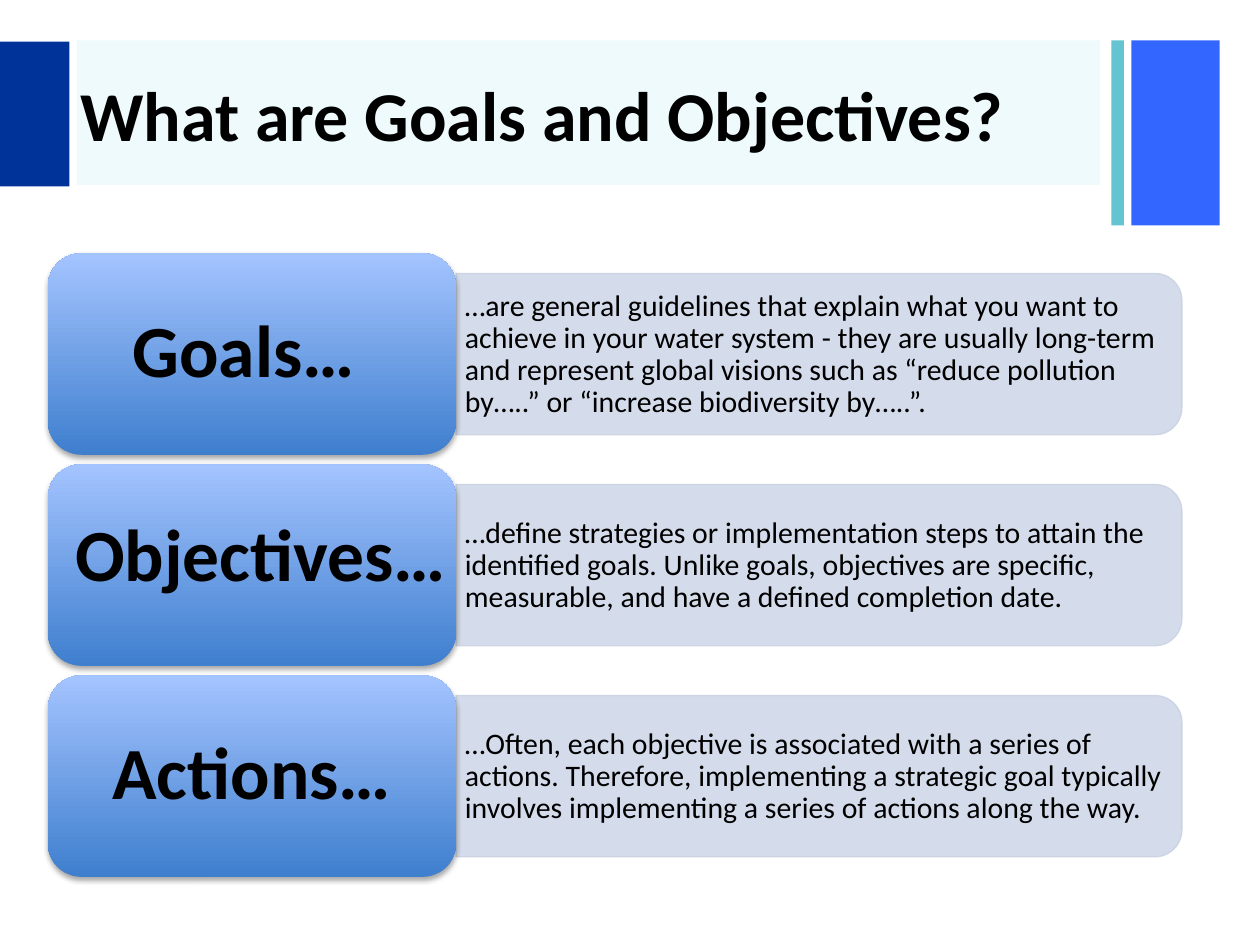
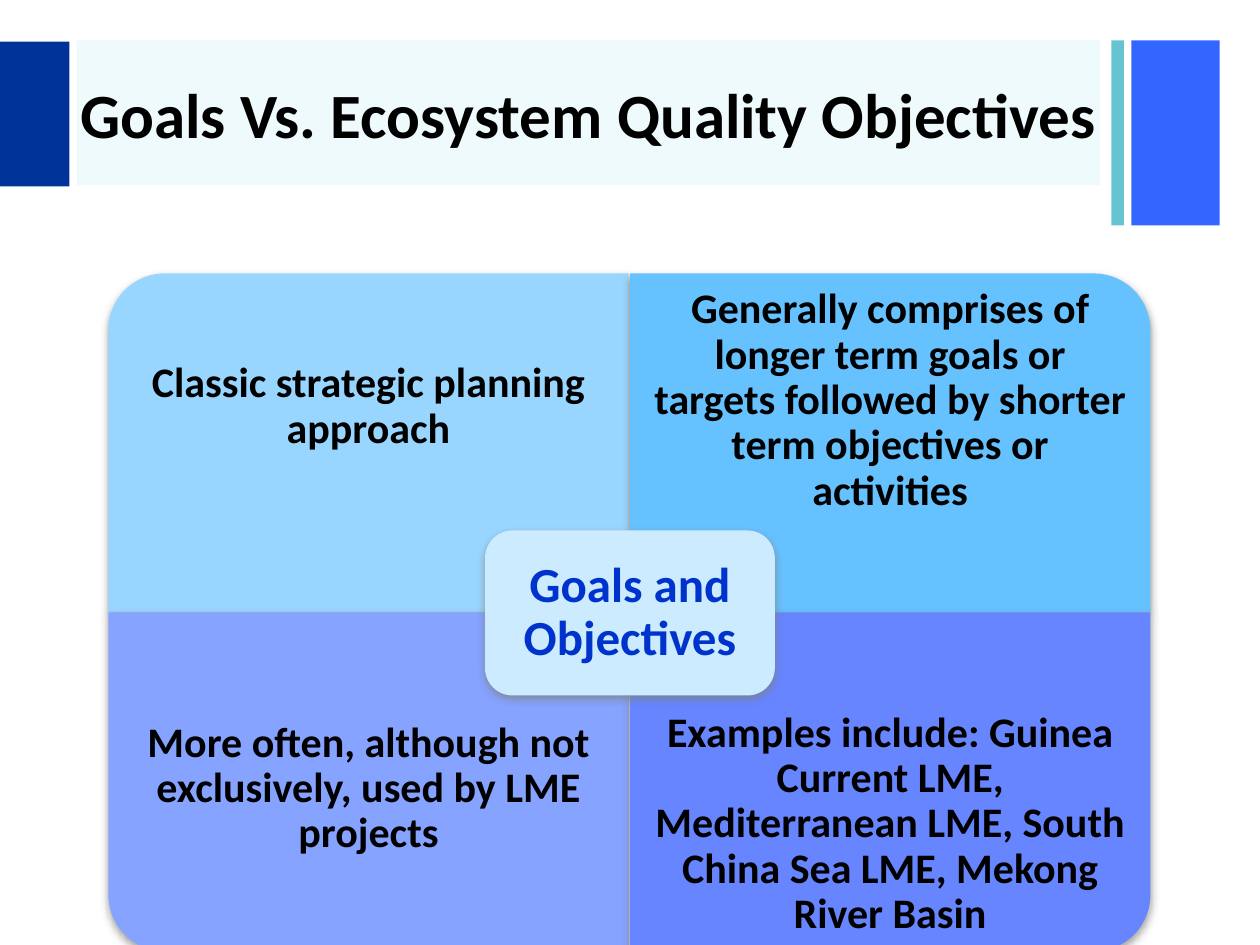
from dataclasses import dataclass
from typing import Optional

from lxml import etree
from pptx import Presentation
from pptx import util as u
from pptx.dml.color import RGBColor
from pptx.enum import shapes, text
from pptx.oxml import ns

FONT = "Calibri"
COLORS = {
    "black": "000000",
    "navy": "003399",
    "blue": "3366FF",
    "teal": "65C4D2",
    "title_band": "14C5D0",
    "body": "D0D8E8",
    "body_line": "CBD3E3",
    "card_dark": "3F7FCE",
    "card_light": "A4C4FF",
    "sky": "99D6FF",
    "azure": "66C2FF",
    "periwinkle": "85A3FF",
    "indigo": "6685FF",
    "center": "CCEBFF",
    "center_text": "0033CC",
    "gray": "808080",
}
RECT = shapes.MSO_SHAPE.RECTANGLE
ROUNDED = shapes.MSO_SHAPE.ROUNDED_RECTANGLE
ROUND_ONE = shapes.MSO_SHAPE.ROUND_1_RECTANGLE
ROUND_SIDE = shapes.MSO_SHAPE.ROUND_2_SAME_RECTANGLE


@dataclass(frozen=True)
class Box:
    left: float
    top: float
    width: float
    height: float

    def inches(self) -> list:
        return [u.Inches(v) for v in (self.left, self.top, self.width, self.height)]

    def turned(self) -> "Box":
        shift = (self.width - self.height) / 2
        return Box(self.left + shift, self.top - shift, self.height, self.width)


@dataclass(frozen=True)
class Shadow:
    color: str
    alpha: int
    blur: float
    distance: float


@dataclass(frozen=True)
class Band:
    box: Box
    color: str
    alpha: int = 100


@dataclass(frozen=True)
class Term:
    label: str
    meaning: str
    insets: tuple = (0.17, 0.09, 0.17, 0.09)


@dataclass(frozen=True)
class Quadrant:
    words: str
    color: str
    rotation: int
    anchor: text.MSO_ANCHOR = text.MSO_ANCHOR.MIDDLE
    top_inset: float = 0.19


CARD_SHADOW = Shadow("black", 35, 3.1, 1.8)
MATRIX_SHADOW = Shadow("gray", 75, 5, 2)

BANDS = [
    Band(Box(8.98, 0.32, 0.7, 1.47), "blue"),
    Band(Box(8.82, 0.32, 0.1, 1.47), "teal"),
    Band(Box(0.61, 0.32, 8.12, 1.15), "title_band", 7),
    Band(Box(0, 0.33, 0.55, 1.15), "navy"),
]
TITLE_BOX = Box(0.54, 0.34, 8.27, 1.12)

TERMS = [
    Term("Goals… ", "…are general guidelines that explain what you want to achieve in "
         "your water system - they are usually long-term and represent global visions "
         "such as “reduce pollution by…..” or “increase biodiversity by…..”."),
    Term("Objectives…", "…define strategies or implementation steps to attain the "
         "identified goals. Unlike goals, objectives are specific, measurable, and have "
         "a defined completion date.", (0.17, 0.03, 0.03, 0.15)),
    Term("Actions…", "…Often, each objective is associated with a series of actions. "
         "Therefore, implementing a strategic goal typically involves implementing a "
         "series of actions along the way."),
]
QUADRANTS = [
    Quadrant("Classic strategic planning approach", "sky", 270,
             text.MSO_ANCHOR.TOP, 0.7),
    Quadrant("Generally comprises of longer term goals or targets followed by shorter "
             "term objectives or activities", "azure", 0),
    Quadrant("More often, although not exclusively, used by LME projects", "periwinkle",
             180, text.MSO_ANCHOR.TOP),
    Quadrant("Examples include: Guinea Current LME, Mediterranean LME, South China Sea "
             "LME, Mekong River Basin", "indigo", 90),
]


def rgb(name: str) -> RGBColor:
    return RGBColor.from_string(COLORS[name])


def set_alpha(fill_parent, percent: int) -> None:
    color = fill_parent.find(ns.qn("a:solidFill"))[0]
    etree.SubElement(color, ns.qn("a:alpha"), val=str(percent * 1000))


def add_shadow(sp, shadow: Shadow) -> None:
    effects = sp._element.spPr.find(ns.qn("a:effectLst"))
    outer = etree.SubElement(
        effects, ns.qn("a:outerShdw"), blurRad=str(u.Pt(shadow.blur)),
        dist=str(u.Pt(shadow.distance)), dir="5400000", rotWithShape="0")
    color = etree.SubElement(outer, ns.qn("a:srgbClr"), val=COLORS[shadow.color])
    etree.SubElement(color, ns.qn("a:alpha"), val=str(shadow.alpha * 1000))


def draw_shape(s, kind, box: Box, color: Optional[str] = None, *, alpha: int = 100,
               rotation: int = 0, line: Optional[str] = None,
               shadow: Optional[Shadow] = None):
    placed = box.turned() if rotation in (90, 270) else box
    sp = s.shapes.add_shape(kind, *placed.inches())
    sp.rotation = rotation
    if color:
        sp.fill.solid()
        sp.fill.fore_color.rgb = rgb(color)
        if alpha < 100:
            set_alpha(sp._element.spPr, alpha)
    if line:
        sp.line.color.rgb = rgb(line)
        sp.line.width = u.Pt(0.75)
        set_alpha(sp.line._ln, alpha)
    else:
        sp.line.fill.background()
    sp.shadow.inherit = False
    if shadow:
        add_shadow(sp, shadow)
    return sp


def write(sp, words: str, *, size: int, color: str = "black", bold: bool = True,
          align=text.PP_ALIGN.CENTER, anchor=text.MSO_ANCHOR.MIDDLE,
          insets: tuple = (0.1, 0.05, 0.1, 0.05), spacing: float = 0.9,
          wrap: bool = True) -> None:
    tf = sp.text_frame
    tf.word_wrap = wrap
    tf.auto_size = text.MSO_AUTO_SIZE.NONE
    tf.vertical_anchor = anchor
    (tf.margin_left, tf.margin_top,
     tf.margin_right, tf.margin_bottom) = [u.Inches(v) for v in insets]
    p = tf.paragraphs[0]
    p.alignment = align
    p.line_spacing = spacing
    r = p.add_run()
    r.text = words
    r.font.name = FONT
    r.font.size = u.Pt(size)
    r.font.bold = bold
    r.font.color.rgb = rgb(color)


def add_slide(prs, title: str, size: int):
    s = prs.slides.add_slide(prs.slide_layouts[6])
    for band in BANDS:
        draw_shape(s, RECT, band.box, band.color, alpha=band.alpha)
    write(s.shapes.add_textbox(*TITLE_BOX.inches()), title, size=size,
          align=text.PP_ALIGN.LEFT, spacing=1.0)
    return s


def draw_term(s, term: Term, top: float) -> None:
    draw_shape(s, ROUND_SIDE, Box(3.62, top + 0.16, 5.76, 1.28), "body", alpha=90,
               rotation=90, line="body_line")
    meaning = s.shapes.add_textbox(*Box(3.62, top + 0.23, 5.7, 1.15).inches())
    write(meaning, term.meaning, size=17, bold=False, align=text.PP_ALIGN.LEFT,
          insets=(0.07, 0.04, 0.07, 0.04))
    card = draw_shape(s, ROUNDED, Box(0.38, top, 3.24, 1.6), shadow=CARD_SHADOW)
    card.fill.gradient()
    card.fill.gradient_angle = 90
    for stop, name in zip(card.fill.gradient_stops, ("card_dark", "card_light")):
        stop.color.rgb = rgb(name)
    write(card, term.label, size=42, insets=term.insets, wrap=False)


def draw_quadrant(s, quadrant: Quadrant, row: int, col: int) -> None:
    left, top = 0.86 + 4.14 * col, 2.17 + 2.69 * row
    draw_shape(s, ROUND_ONE, Box(left, top, 4.13, 2.69), quadrant.color,
               rotation=quadrant.rotation, shadow=MATRIX_SHADOW)
    words = s.shapes.add_textbox(*Box(left, top + 0.67 * row, 4.13, 2.02).inches())
    write(words, quadrant.words, size=24, anchor=quadrant.anchor,
          insets=(0.19, quadrant.top_inset, 0.19, 0.19))


def main() -> None:
    prs = Presentation()
    prs.slide_width, prs.slide_height = u.Inches(10), u.Inches(7.5)

    s = add_slide(prs, "What are Goals and Objectives?", 40)
    for i, term in enumerate(TERMS):
        draw_term(s, term, 2.01 + 1.675 * i)

    s = add_slide(prs, "Goals Vs. Ecosystem Quality Objectives", 36)
    for i, quadrant in enumerate(QUADRANTS):
        draw_quadrant(s, quadrant, *divmod(i, 2))
    center = draw_shape(s, ROUNDED, Box(3.85, 4.21, 2.3, 1.31), "center",
                        shadow=MATRIX_SHADOW)
    write(center, "Goals and Objectives", size=28, color="center_text",
          insets=(0.12, 0.12, 0.12, 0.12))

    prs.save("out.pptx")


if __name__ == "__main__":
    main()
